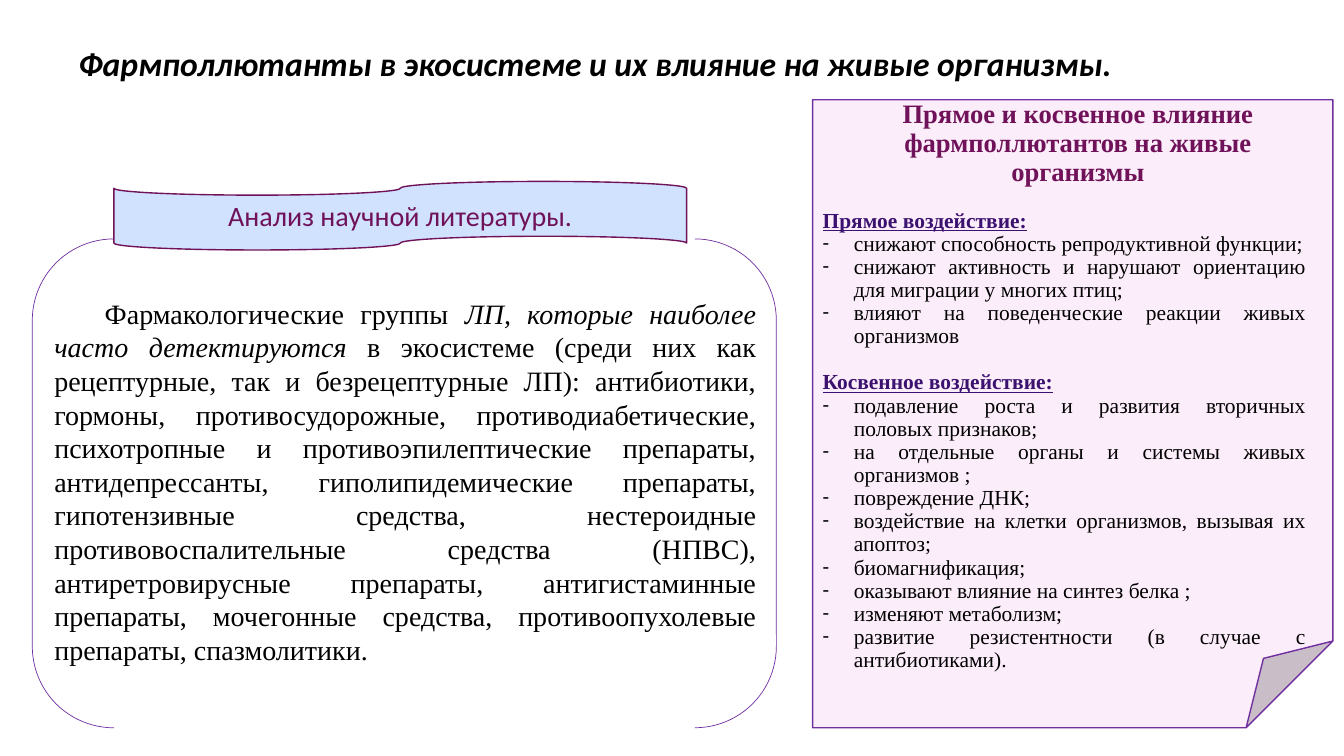
from dataclasses import dataclass
from lxml import etree
from pptx import Presentation
from pptx.dml.color import RGBColor
from pptx.enum.shapes import MSO_SHAPE
from pptx.enum.text import MSO_ANCHOR, PP_ALIGN
from pptx.oxml.ns import qn
from pptx.util import Inches, Pt

TAPE = MSO_SHAPE.FLOWCHART_PUNCHED_TAPE
PAIR = MSO_SHAPE.DOUBLE_BRACKET
FOLD = MSO_SHAPE.FOLDED_CORNER
TOP, MID = MSO_ANCHOR.TOP, MSO_ANCHOR.MIDDLE
LEFT, MIDST, EVEN = PP_ALIGN.LEFT, PP_ALIGN.CENTER, PP_ALIGN.JUSTIFY


@dataclass(frozen=True)
class Theme:
    sans: str = "Calibri"
    serif: str = "Times New Roman"
    ink: str = "000000"
    plum: str = "701259"
    navy: str = "3C1270"
    edge: str = "7030A0"
    pink: str = "FCEDFA"
    sky: str = "D1E2FF"
    title: float = 24
    text: float = 20
    head: float = 19
    item: float = 15.3


T = Theme()

DRUGS = [
    ("Фармакологические группы ", False),
    ("ЛП, которые наиболее часто детектируются", True),
    (" в экосистеме (среди них как рецептурные, так и безрецептурные "
     "ЛП): антибиотики, гормоны, противосудорожные, противодиабетические, "
     "психотропные и противоэпилептические препараты, антидепрессанты, "
     "гиполипидемические препараты, гипотензивные средства, нестероидные "
     "противовоспалительные средства (НПВС), антиретровирусные препараты, "
     "антигистаминные препараты, мочегонные средства, противоопухолевые "
     "препараты, спазмолитики.", False),
]

EFFECTS = {
    "Прямое воздействие:": [
        "снижают способность репродуктивной функции;",
        "снижают активность и нарушают ориентацию для миграции у многих птиц;",
        "влияют на поведенческие реакции живых организмов",
    ],
    "Косвенное воздействие:": [
        "подавление роста и развития вторичных половых признаков;",
        "на отдельные органы и системы живых организмов ;",
        "повреждение ДНК;",
        "воздействие на клетки организмов, вызывая их апоптоз;",
        "биомагнификация;",
        "оказывают влияние на синтез белка ;",
        "изменяют метаболизм;",
        "развитие резистентности (в случае с антибиотиками).",
    ],
}


def add_run(para, text, size, font, color, bold=False, slant=False, under=False):
    run = para.add_run()
    run.text = text
    face = run.font
    face.size, face.name = Pt(size), font
    face.bold, face.italic, face.underline = bold, slant, under
    face.color.rgb = RGBColor.from_string(color)


def set_para(para, align, space=1.0):
    para.alignment = align
    para.line_spacing = space
    return para


def set_indent(para, left, first):
    props = para._p.get_or_add_pPr()
    props.set("marL", str(Inches(left)))
    props.set("indent", str(Inches(first)))
    return props


def add_bullet(para):
    props = set_indent(para, 0.31, -0.31)
    etree.SubElement(props, qn("a:buFont")).set("typeface", T.sans)
    etree.SubElement(props, qn("a:buChar")).set("char", "-")


def add_text(slide, x, y, w, h, anchor=TOP):
    box = slide.shapes.add_textbox(Inches(x), Inches(y), Inches(w), Inches(h))
    frame = box.text_frame
    frame.word_wrap = True
    frame.vertical_anchor = anchor
    return frame


def add_form(slide, kind, x, y, w, h, line, width, fill=None):
    form = slide.shapes.add_shape(kind, Inches(x), Inches(y), Inches(w), Inches(h))
    form.shadow.inherit = False
    if fill:
        form.fill.solid()
        form.fill.fore_color.rgb = RGBColor.from_string(fill)
    else:
        form.fill.background()
    form.line.color.rgb = RGBColor.from_string(line)
    form.line.width = Pt(width)
    return form


def draw_title(slide, x, y, w, h):
    para = set_para(add_text(slide, x, y, w, h, MID).paragraphs[0], LEFT, 0.9)
    add_run(para, "Фармполлютанты в экосистеме и их влияние на живые организмы.",
            T.title, T.sans, T.ink, bold=True, slant=True)


def draw_drugs(slide, x, y, w, h):
    add_form(slide, PAIR, x, y, w, h, T.edge, 0.5)
    frame = add_text(slide, x + 0.12, y + 0.52, w - 0.22, h - 1.05)
    para = set_para(frame.paragraphs[0], EVEN)
    set_indent(para, 0, 0.5)
    for text, slant in DRUGS:
        add_run(para, text, T.text, T.serif, T.ink, slant=slant)
    tape = add_form(slide, TAPE, x + 0.81, y - 0.57, w - 1.7, 0.68,
                    T.plum, 1, T.sky)
    tape.text_frame.word_wrap = True
    tape.text_frame.vertical_anchor = MID
    add_run(set_para(tape.text_frame.paragraphs[0], MIDST),
            "Анализ научной литературы.", T.text, T.sans, T.plum)


def draw_effects(slide, x, y, w, h):
    add_form(slide, FOLD, x, y, w, h, T.edge, 1, T.pink)
    head = add_text(slide, x + 0.46, y - 0.04, w - 0.82, 0.99)
    add_run(set_para(head.paragraphs[0], MIDST, 0.9),
            "Прямое и косвенное влияние фармполлютантов на живые организмы",
            T.head, T.serif, T.plum, bold=True)
    frame = add_text(slide, x, y + 1.04, w - 0.17, h - 1.5)
    para = frame.paragraphs[0]
    for num, (name, items) in enumerate(EFFECTS.items()):
        if num:
            para = frame.add_paragraph()
            para.space_before = Pt(16.5)
        set_para(para, LEFT, 0.9)
        add_run(para, name, T.item, T.serif, T.navy, bold=True, under=True)
        for item in items:
            para = set_para(frame.add_paragraph(), EVEN, 0.9)
            add_bullet(para)
            add_run(para, item, T.item, T.serif, T.ink)


def main():
    deck = Presentation()
    deck.slide_width, deck.slide_height = Inches(13.33), Inches(7.5)
    slide = deck.slides.add_slide(deck.slide_layouts[6])
    draw_title(slide, 0.68, -0.07, 11.5, 1.45)
    draw_drugs(slide, 0.32, 2.37, 7.38, 4.85)
    draw_effects(slide, 8.06, 0.99, 5.16, 6.23)
    deck.save("out.pptx")


if __name__ == "__main__":
    main()
